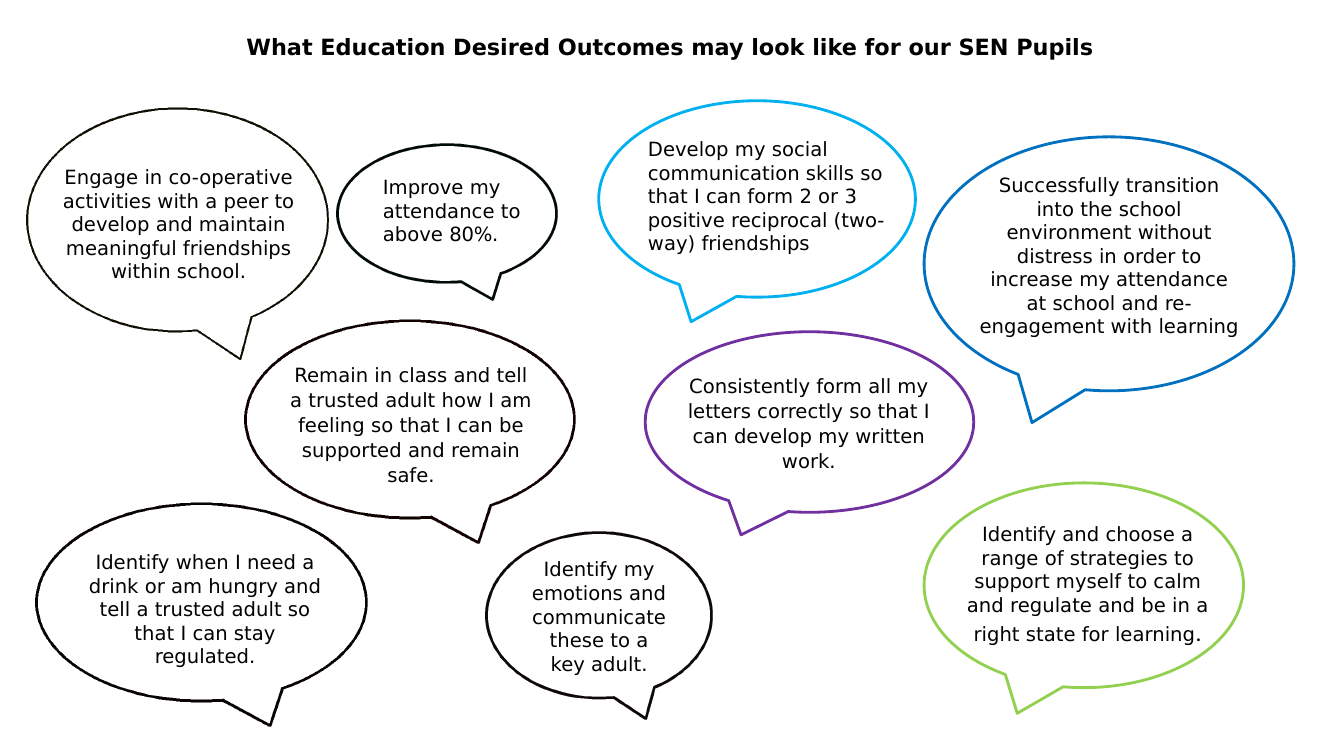
import lxml.etree
import pptx
import pptx.dml.color
import pptx.enum.shapes
import pptx.enum.text
import pptx.oxml
import pptx.oxml.ns
import pptx.util

Cm = pptx.util.Cm
Pt = pptx.util.Pt
RGBColor = pptx.dml.color.RGBColor
LEFT = pptx.enum.text.PP_ALIGN.LEFT
CENTER = pptx.enum.text.PP_ALIGN.CENTER

BLACK = RGBColor(0x00, 0x00, 0x00)
BLUE = RGBColor(0x00, 0x70, 0xC0)
AMBER = RGBColor(0xFF, 0xC0, 0x00)
PINK = RGBColor(0xD8, 0x6E, 0xCC)
LIME = RGBColor(0x92, 0xD0, 0x50)
GREEN = RGBColor(0x00, 0xB0, 0x50)
BROWN = RGBColor(0x80, 0x35, 0x0E)
PURPLE = RGBColor(0x70, 0x30, 0xA0)
SKY = RGBColor(0x00, 0xB0, 0xF0)
RED = RGBColor(0xFF, 0x00, 0x00)

FONT = "DejaVu Sans"
HALF_TURN = (
    f'<a:scene3d {pptx.oxml.ns.nsdecls("a")}>'
    '<a:camera prst="orthographicFront"><a:rot lat="0" lon="10800000" rev="0"/></a:camera>'
    '<a:lightRig rig="threePt" dir="t"/></a:scene3d>'
)


def add_bubble(slide, box, color, turned=False, weight=2):
    shape = slide.shapes.add_shape(
        pptx.enum.shapes.MSO_SHAPE.OVAL_CALLOUT, *map(Cm, box))
    shape.shadow.inherit = False
    shape.fill.background()
    shape.line.color.rgb = color
    shape.line.width = Pt(weight)
    if turned:
        shape._element.spPr.append(pptx.oxml.parse_xml(HALF_TURN))


def add_run(paragraph, text, size=14, bold=False, font=FONT):
    run = paragraph.add_run()
    run.text = text
    run.font.name = font
    run.font.size = Pt(size)
    run.font.bold = bold
    run.font.color.rgb = BLACK
    return run


def add_text(slide, box, text, align=CENTER, size=14, bold=False, loose=False):
    frame = slide.shapes.add_textbox(*map(Cm, box)).text_frame
    frame.word_wrap = True
    frame.auto_size = pptx.enum.text.MSO_AUTO_SIZE.SHAPE_TO_FIT_TEXT
    paragraph = frame.paragraphs[0]
    paragraph.alignment = align
    if loose:
        paragraph.line_spacing = 1.07
        paragraph.space_after = Pt(8)
    add_run(paragraph, text, size, bold)
    return paragraph


def main():
    presentation = pptx.Presentation()
    presentation.slide_width = Cm(33.87)
    presentation.slide_height = Cm(19.05)
    slide = presentation.slides.add_slide(presentation.slide_layouts[6])

    add_text(slide, (0.94, 0.71, 31.9, 1.63),
             "What Education Desired Outcomes may look like for our SEN Pupils",
             size=16, bold=True)

    add_bubble(slide, (23.29, 3.45, 9.32, 6.4), BLUE)
    add_bubble(slide, (0.69, 2.74, 7.57, 5.59), AMBER, turned=True, weight=1.5)
    add_text(slide, (1.24, 4.04, 6.53, 3.25),
             "Engage in co-operative activities with a peer to develop and "
             "maintain meaningful friendships within school.")
    add_text(slide, (24.41, 4.24, 7.09, 4.45),
             "Successfully transition into the school environment without distress "
             "in order to increase my attendance at school and re-engagement with learning")

    add_bubble(slide, (12.27, 13.44, 5.64, 4.14), PINK, turned=True)
    add_text(slide, (13.13, 13.92, 3.94, 3.25),
             "Identify my emotions and communicate these to a key adult.")

    add_bubble(slide, (23.29, 12.17, 8.05, 5.16), LIME)
    strategies = add_text(
        slide, (24.1, 13.03, 6.63, 3.43),
        "Identify and choose a range of strategies to support myself to calm "
        "and regulate and be in a right state for learning")
    add_run(strategies, ".", size=18, font="Roboto")

    add_bubble(slide, (8.51, 3.66, 5.51, 3.45), GREEN, turned=True)
    add_bubble(slide, (0.94, 12.7, 8.28, 4.95), BROWN, turned=True)
    add_bubble(slide, (16.26, 8.36, 8.28, 4.55), PURPLE)
    add_bubble(slide, (15.09, 2.54, 7.98, 4.95), SKY)
    add_text(slide, (16.08, 3.33, 6.55, 3.25),
             "Develop my social communication skills so that I can form 2 or 3 "
             "positive reciprocal (two-way) friendships", LEFT)
    attendance = add_text(slide, (9.4, 4.29, 4.22, 2.06),
                          "Improve my attendance to above ", LEFT)
    target = add_run(attendance, "80%.")
    target.font._element.set("spc", "-20")
    add_text(slide, (1.98, 13.74, 6.38, 3.25),
             "Identify when I need a drink or am hungry and tell a trusted adult "
             "so that I can stay regulated.")
    add_text(slide, (16.84, 9.25, 7.09, 2.77),
             "Consistently form all my letters correctly so that I can develop "
             "my written work.", loose=True)
    add_text(slide, (7.06, 8.97, 6.6, 3.4),
             "Remain in class and tell a trusted adult how I am feeling so that "
             "I can be supported and remain safe.", loose=True)
    add_bubble(slide, (6.2, 8.08, 8.28, 4.95), RED, turned=True)

    presentation.save("out.pptx")


if __name__ == "__main__":
    main()
